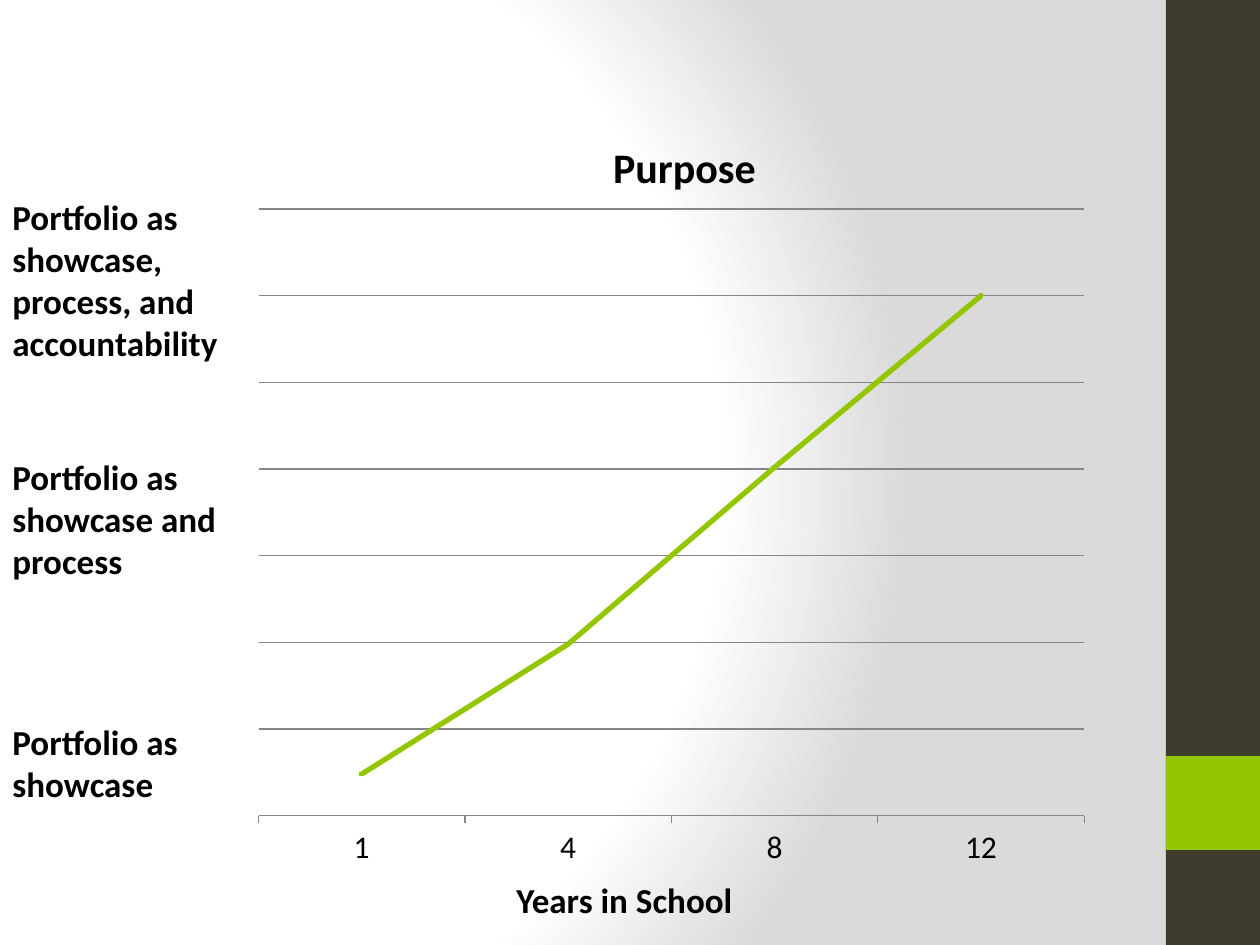
from lxml import etree
from pptx import Presentation
from pptx.chart.data import CategoryChartData
from pptx.dml.color import RGBColor
from pptx.enum.chart import XL_CHART_TYPE, XL_TICK_LABEL_POSITION, XL_TICK_MARK
from pptx.enum.shapes import MSO_SHAPE
from pptx.enum.text import MSO_AUTO_SIZE
from pptx.oxml import parse_xml
from pptx.oxml.ns import nsdecls, qn
from pptx.util import Pt

LINE_STACKED = XL_CHART_TYPE.LINE_STACKED
RECT = MSO_SHAPE.RECTANGLE
NO_LABELS = XL_TICK_LABEL_POSITION.NONE
TICK_OUT, TICK_NONE = XL_TICK_MARK.OUTSIDE, XL_TICK_MARK.NONE
GROW = MSO_AUTO_SIZE.SHAPE_TO_FIT_TEXT

# Content: boxes are left, top, width, height in px
FONT = "Calibri"
COLORS = {"white": "FFFFFF", "shade": "DADADA", "dark": "3E3D2D",
          "green": "94C600", "text": "000000", "grid": "868686"}
STOPS = [(0, "white"), (75, "white"), (100, "shade")]
BANDS = [((1166, 0, 94, 945), "dark"), ((1166, 756, 94, 94), "green")]
CATEGORIES = ["1", "4", "8", "12"]
VALUES = [8, 33, 67, 100]
GRID_STEP, GRID_COUNT = 16.67, 7
CHART = (242, 94, 872, 788)
PLOT = (259, 209, 826, 607)
TITLE = (606, 132)
LABELS = [
    ("Years in School", (504, 872, 284, 55)),
    ("Portfolio as showcase", (0, 714, 284, 97)),
    ("Portfolio as showcase and process", (0, 449, 284, 140)),
    ("Portfolio as showcase, process, and accountability", (0, 189, 284, 183)),
]
SCALE = 914400 / 126


def px(*lengths):
    return [round(n * SCALE) for n in lengths]


def rgb(name):
    return RGBColor.from_string(COLORS[name])


def style(font, size, bold):
    font.name, font.size, font.bold = FONT, Pt(size), bold
    font.color.rgb = rgb("text")


def chart_layout(left, top, width=None, height=None):
    """Manual layout in fractions of the chart frame."""
    parts = {"xMode": "edge", "yMode": "edge",
             "x": round((left - CHART[0]) / CHART[2], 3),
             "y": round((top - CHART[1]) / CHART[3], 3)}
    if width:
        parts = {"layoutTarget": "inner", **parts,
                 "w": round(width / CHART[2], 3), "h": round(height / CHART[3], 3)}
    layout = etree.Element(qn("c:layout"))
    manual = etree.SubElement(layout, qn("c:manualLayout"))
    for tag, val in parts.items():
        etree.SubElement(manual, qn("c:" + tag)).set("val", str(val))
    return layout


def set_layout(parent, layout, after=None):
    old = parent.find(qn("c:layout"))
    if old is not None:
        parent.remove(old)
    if after is None:
        parent.insert(0, layout)
    else:
        after.addnext(layout)


prs = Presentation()
prs.slide_width, prs.slide_height = px(1260, 945)
slide = prs.slides.add_slide(prs.slide_layouts[6])

# Background: circular gradient
slide.background.fill.gradient()
grad = next(slide.element.iter(qn("a:gradFill")))
stops = "".join(f'<a:gs pos="{pos * 1000}"><a:srgbClr val="{COLORS[c]}"/></a:gs>'
                for pos, c in STOPS)
grad.getparent().replace(grad, parse_xml(
    f'<a:gradFill {nsdecls("a")} rotWithShape="1"><a:gsLst>{stops}</a:gsLst>'
    '<a:path path="circle"><a:fillToRect l="20000" t="50000" r="100000" b="50000"/>'
    '</a:path></a:gradFill>'))

# Side bands
for box, color in BANDS:
    s = slide.shapes.add_shape(RECT, *px(*box))
    s.shadow.inherit = False
    s.fill.solid()
    s.fill.fore_color.rgb = rgb(color)
    s.line.fill.background()

# Chart
data = CategoryChartData()
data.categories = CATEGORIES
data.add_series("Series 1", VALUES)
chart = slide.shapes.add_chart(LINE_STACKED, *px(*CHART), data).chart
style(chart.font, 18, False)
chart.has_legend = False
chart.has_title = True
title = chart.chart_title
r = title.text_frame.paragraphs[0].add_run()
r.text = "Purpose"
style(r.font, 24, True)
title.include_in_layout = False
set_layout(title.element if hasattr(title, "element") else title._element,
           chart_layout(*TITLE), next(chart.element.iter(qn("c:tx"))))
set_layout(next(chart.element.iter(qn("c:plotArea"))), chart_layout(*PLOT))

series = chart.plots[0].series[0]
series.smooth = False
series.marker.style = None
series.format.line.color.rgb = rgb("green")
series.format.line.width = Pt(3)
marker = series.marker
marker.format.fill.background()
marker.format.line.fill.background()
marker.size = 2

cat_axis, val_axis = chart.category_axis, chart.value_axis
cat_axis.major_tick_mark = TICK_OUT
val_axis.minimum_scale = 0
val_axis.maximum_scale = round(GRID_STEP * GRID_COUNT, 2)
val_axis.major_unit = GRID_STEP
val_axis.major_tick_mark = TICK_NONE
val_axis.tick_label_position = NO_LABELS
val_axis.has_major_gridlines = True
val_axis.format.line.fill.background()
val_axis.visible = False
for line in (cat_axis.format.line, val_axis.major_gridlines.format.line):
    line.color.rgb = rgb("grid")
    line.width = Pt(0.75)

# Axis labels
for text, box in LABELS:
    tf = slide.shapes.add_textbox(*px(*box)).text_frame
    tf.word_wrap = True
    tf.auto_size = GROW
    r = tf.paragraphs[0].add_run()
    r.text = text
    style(r.font, 20, True)

prs.save("out.pptx")
